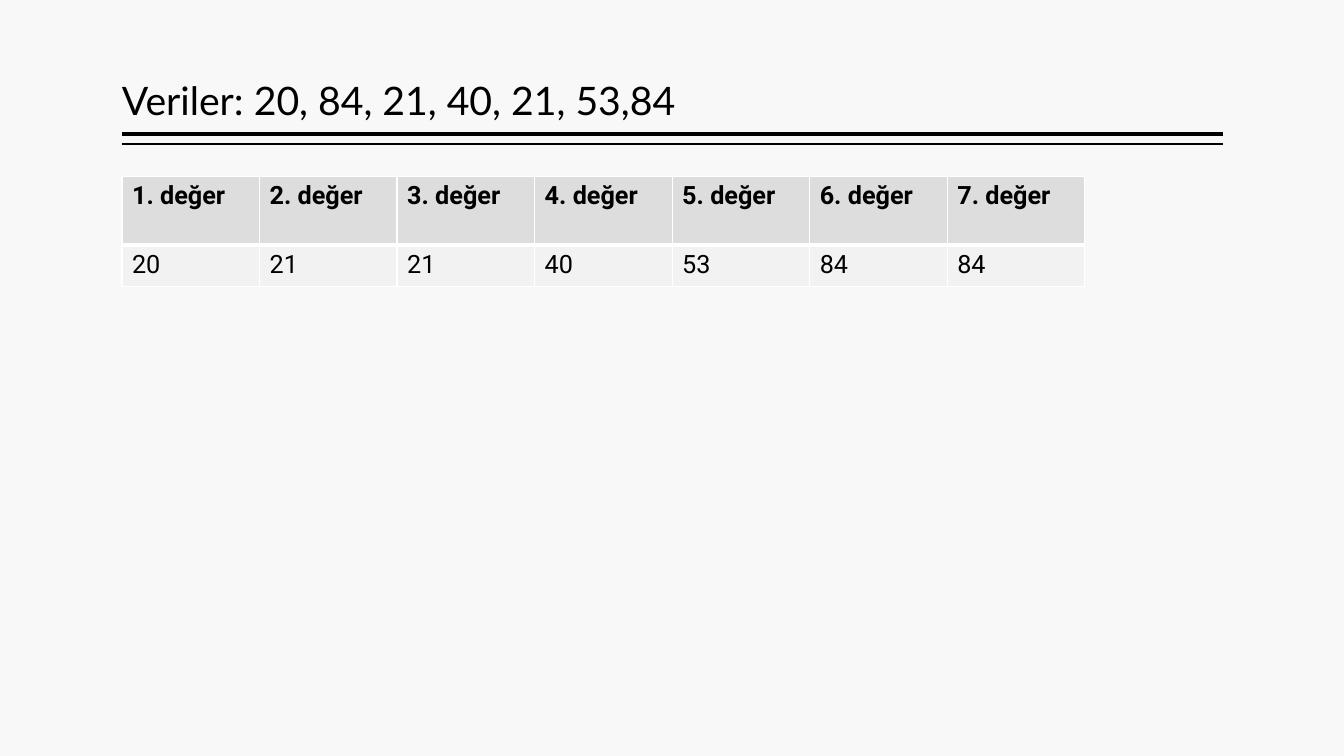
from dataclasses import dataclass

from lxml import etree
from pptx import Presentation
from pptx.dml.color import RGBColor
from pptx.enum.shapes import MSO_CONNECTOR
from pptx.enum.text import MSO_ANCHOR
from pptx.oxml.ns import qn
from pptx.util import Inches, Pt

STRAIGHT = MSO_CONNECTOR.STRAIGHT
BOTTOM = MSO_ANCHOR.BOTTOM


@dataclass(frozen=True)
class Theme:
    paper: str = "F8F8F8"
    ink: str = "000000"
    head: str = "DDDDDD"
    body: str = "F2F2F2"
    edge: str = "FFFFFF"
    title_font: str = "Lato"
    table_font: str = "Roboto"
    title_size: int = 28
    table_size: int = 18


def rgb(code):
    return RGBColor.from_string(code)


def write(frame, text, font, size, color, bold=False, spacing=None):
    para = frame.paragraphs[0]
    if spacing:
        para.line_spacing = spacing
    run = para.add_run()
    run.text = text
    run.font.name = font
    run.font.size = Pt(size)
    run.font.bold = bold
    run.font.color.rgb = rgb(color)


def border(cell, color, widths):
    """Set cell edges; widths are points for left, right, top, bottom."""
    props = cell._tc.get_or_add_tcPr()
    for spot, (side, width) in enumerate(zip("LRTB", widths)):
        line = etree.Element(qn(f"a:ln{side}"), w=str(Pt(width)))
        fill = etree.SubElement(line, qn("a:solidFill"))
        etree.SubElement(fill, qn("a:srgbClr"), val=color)
        props.insert(spot, line)


class Page:
    def __init__(self, deck, theme):
        self.theme = theme
        self.slide = deck.slides.add_slide(deck.slide_layouts[6])
        fill = self.slide.background.fill
        fill.solid()
        fill.fore_color.rgb = rgb(theme.paper)

    def rule(self, left, right, y, width):
        line = self.slide.shapes.add_connector(
            STRAIGHT, Inches(left), Inches(y), Inches(right), Inches(y))
        line.line.color.rgb = rgb(self.theme.ink)
        line.line.width = Pt(width)
        etree.SubElement(line._element.spPr, qn("a:effectLst"))

    def title(self, text, *area):
        box = self.slide.shapes.add_textbox(*map(Inches, area))
        frame = box.text_frame
        frame.word_wrap = True
        frame.vertical_anchor = BOTTOM
        frame.margin_left = frame.margin_right = 0
        write(frame, text, self.theme.title_font, self.theme.title_size,
              self.theme.ink, spacing=0.9)

    def table(self, rows, heights, left, top, width):
        theme = self.theme
        table = self.slide.shapes.add_table(
            len(rows), len(rows[0]), Inches(left), Inches(top),
            Inches(width), Inches(sum(heights))).table
        for r, row in enumerate(rows):
            table.rows[r].height = Inches(heights[r])
            is_head = r == 0
            for c, text in enumerate(row):
                cell = table.cell(r, c)
                cell.fill.solid()
                cell.fill.fore_color.rgb = rgb(theme.head if is_head else theme.body)
                border(cell, theme.edge, (1, 1, 1, 3) if is_head else (1, 1, 3, 1))
                write(cell.text_frame, text, theme.table_font,
                      theme.table_size, theme.ink, bold=is_head)


def main():
    deck = Presentation()
    deck.slide_width, deck.slide_height = Inches(13.33), Inches(7.5)
    page = Page(deck, Theme())
    left, width = 1.21, 10.92
    for y, weight in ((1.33, 3), (1.43, 1)):
        page.rule(left, left + width, y, weight)
    page.title("Veriler: 20, 84, 21, 40, 21, 53,84", left, 0.08, width, 1.2)
    values = [20, 21, 21, 40, 53, 84, 84]
    heads = [f"{n}. değer" for n in range(1, len(values) + 1)]
    page.table([heads, [str(v) for v in values]], (0.68, 0.41), left, 1.75, 9.55)
    deck.save("out.pptx")


if __name__ == "__main__":
    main()
